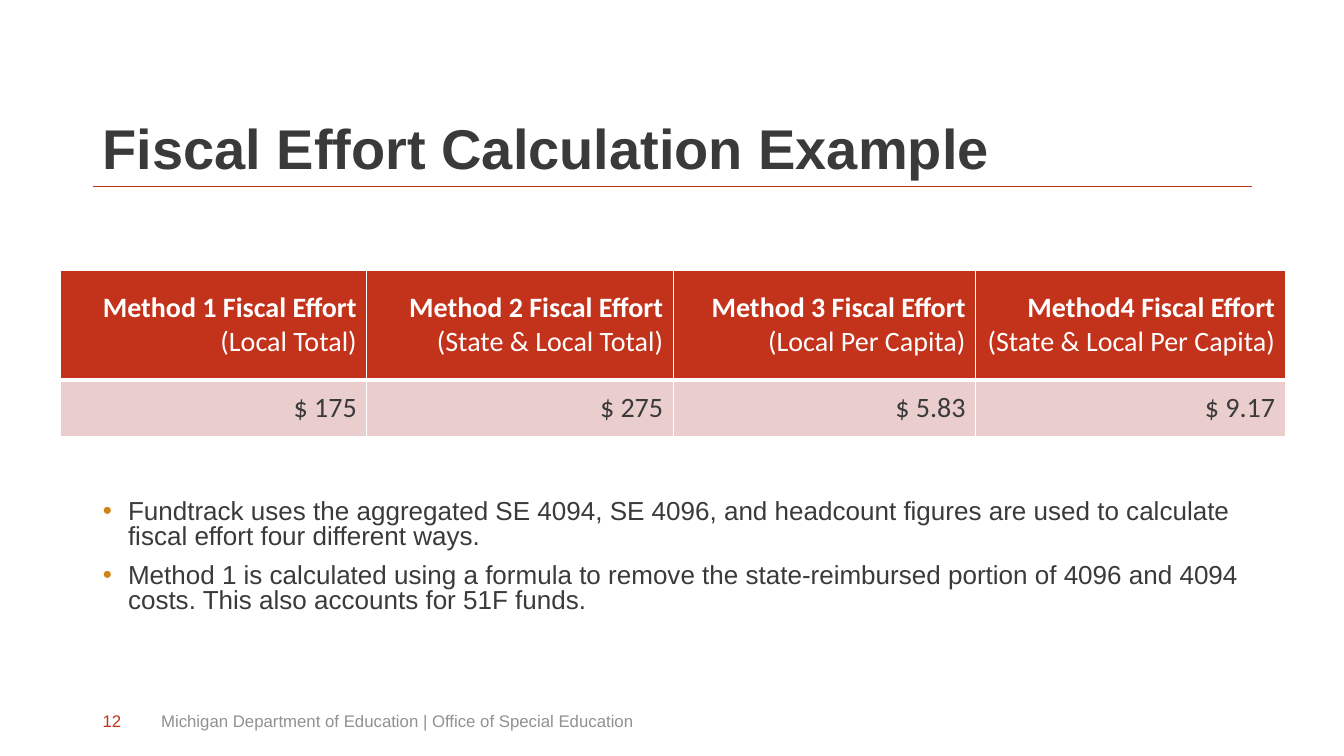
from dataclasses import dataclass

from lxml import etree
from pptx import Presentation
from pptx.dml.color import RGBColor
from pptx.enum.shapes import MSO_CONNECTOR
from pptx.enum.text import MSO_ANCHOR, MSO_AUTO_SIZE, PP_ALIGN
from pptx.oxml import parse_xml
from pptx.oxml.ns import nsdecls, qn
from pptx.slide import Slide
from pptx.table import _Cell as Cell
from pptx.text.text import Font, TextFrame
from pptx.util import Inches, Length, Pt


@dataclass(frozen=True)
class Theme:
    accent: str = "C3321B"
    text: str = "3A3A3A"
    muted: str = "919191"
    white: str = "FFFFFF"
    value_fill: str = "E9CECD"
    bullet: str = "D1831E"
    text_font: str = "Arial"
    table_font: str = "Calibri"
    title_size: float = 40
    table_size: float = 20
    body_size: float = 18.6
    footer_size: float = 12
    cell_border: float = 1
    header_border: float = 3


@dataclass(frozen=True)
class Method:
    name: str
    scope: str
    value: str
    width: float


@dataclass(frozen=True)
class FooterItem:
    text: str
    left: float
    width: float
    color: str


THEME = Theme()
WIDTH, HEIGHT = Inches(13.33), Inches(7.5)

# Positions and sizes are percentages of the slide's width or height.
MARGIN, CONTENT_WIDTH = 6.9, 86.27
TITLE_TOP, TITLE_HEIGHT = 5.33, 19.33
TABLE_LEFT, TABLE_TOP = 4.5, 35.73
HEADER_HEIGHT, VALUE_HEIGHT = 14.53, 7.47
BODY_TOP, BODY_HEIGHT = 65.6, 17.2
FOOTER_TOP, FOOTER_HEIGHT = 92.67, 5.33

METHODS = (
    Method("Method 1 Fiscal Effort", "(Local Total)", "$ 175", 22.8),
    Method("Method 2 Fiscal Effort", "(State & Local Total)", "$ 275", 22.8),
    Method("Method 3 Fiscal Effort", "(Local Per Capita)", "$ 5.83", 22.5),
    Method("Method4 Fiscal Effort", "(State & Local Per Capita)", "$ 9.17", 23.03),
)
POINTS = (
    "Fundtrack uses the aggregated SE 4094, SE 4096, and headcount figures are used "
    "to calculate fiscal effort four different ways.",
    "Method 1 is calculated using a formula to remove the state-reimbursed portion of "
    "4096 and 4094 costs. This also accounts for 51F funds.",
)
FOOTER = (
    FooterItem("12", MARGIN, 3.38, THEME.accent),
    FooterItem("Michigan Department of Education | Office of Special Education",
               11.25, 62.94, THEME.muted),
)


def across(share: float) -> Length:
    return Length(round(WIDTH * share / 100))


def down(share: float) -> Length:
    return Length(round(HEIGHT * share / 100))


def place(shape, left: float, top: float, width: float, height: float) -> None:
    shape.left, shape.top = across(left), down(top)
    shape.width, shape.height = across(width), down(height)


def style(font: Font, name: str, size: float, color: str, bold: bool = False) -> None:
    font.name, font.size, font.bold = name, Pt(size), bold
    font.color.rgb = RGBColor.from_string(color)


def prepare(frame: TextFrame, anchor: MSO_ANCHOR) -> None:
    frame.word_wrap = True
    frame.auto_size = MSO_AUTO_SIZE.NONE
    frame.vertical_anchor = anchor


def add_title(slide: Slide) -> None:
    title = slide.shapes.title
    place(title, MARGIN, TITLE_TOP, CONTENT_WIDTH, TITLE_HEIGHT)
    title.text_frame.text = "Fiscal Effort Calculation Example"
    prepare(title.text_frame, MSO_ANCHOR.BOTTOM)
    paragraph = title.text_frame.paragraphs[0]
    paragraph.alignment, paragraph.line_spacing = PP_ALIGN.LEFT, 0.9
    style(paragraph.runs[0].font, THEME.text_font, THEME.title_size, THEME.text, True)


def add_title_rule(slide: Slide) -> None:
    y = down(TITLE_TOP + TITLE_HEIGHT)
    rule = slide.shapes.add_connector(
        MSO_CONNECTOR.STRAIGHT, across(MARGIN), y, across(MARGIN + CONTENT_WIDTH), y)
    rule.line.color.rgb = RGBColor.from_string(THEME.accent)
    rule.line.width = Pt(0.5)
    etree.SubElement(rule._element.spPr, qn("a:effectLst"))


def set_borders(cell: Cell, top: float, bottom: float) -> None:
    side = THEME.cell_border
    properties = cell._tc.get_or_add_tcPr()
    borders = (("lnL", side), ("lnR", side), ("lnT", top), ("lnB", bottom))
    for index, (tag, width) in enumerate(borders):
        properties.insert(index, parse_xml(
            f'<a:{tag} {nsdecls("a")} w="{Pt(width)}"><a:solidFill>'
            f'<a:srgbClr val="{THEME.white}"/></a:solidFill></a:{tag}>'))


def fill_cell(cell: Cell, lines: tuple[str, ...], fill: str, color: str,
              bold_first: bool) -> None:
    cell.fill.solid()
    cell.fill.fore_color.rgb = RGBColor.from_string(fill)
    cell.vertical_anchor = MSO_ANCHOR.MIDDLE
    cell.text_frame.text = "\n".join(lines)
    for index, paragraph in enumerate(cell.text_frame.paragraphs):
        paragraph.alignment = PP_ALIGN.RIGHT
        style(paragraph.runs[0].font, THEME.table_font, THEME.table_size, color,
              bold_first and index == 0)


def add_methods_table(slide: Slide) -> None:
    table = slide.shapes.add_table(
        2, len(METHODS), across(TABLE_LEFT), down(TABLE_TOP),
        across(sum(method.width for method in METHODS)),
        down(HEADER_HEIGHT + VALUE_HEIGHT)).table
    table.rows[0].height, table.rows[1].height = down(HEADER_HEIGHT), down(VALUE_HEIGHT)
    for index, method in enumerate(METHODS):
        table.columns[index].width = across(method.width)
        header, value = table.cell(0, index), table.cell(1, index)
        fill_cell(header, (method.name, method.scope), THEME.accent, THEME.white, True)
        fill_cell(value, (method.value,), THEME.value_fill, THEME.text, False)
        set_borders(header, THEME.cell_border, THEME.header_border)
        set_borders(value, THEME.header_border, THEME.cell_border)


def add_points(slide: Slide) -> None:
    body = slide.placeholders[1]
    place(body, MARGIN, BODY_TOP, CONTENT_WIDTH, BODY_HEIGHT)
    body.text_frame.text = "\n".join(POINTS)
    prepare(body.text_frame, MSO_ANCHOR.TOP)
    for index, paragraph in enumerate(body.text_frame.paragraphs):
        properties = paragraph._p.get_or_add_pPr()
        properties.set("marL", str(Inches(0.25)))
        properties.set("indent", str(-Inches(0.25)))
        color = etree.SubElement(properties, qn("a:buClr"))
        etree.SubElement(color, qn("a:srgbClr"), val=THEME.bullet)
        etree.SubElement(properties, qn("a:buFont"), typeface=THEME.text_font)
        etree.SubElement(properties, qn("a:buChar"), char="•")
        paragraph.alignment, paragraph.line_spacing = PP_ALIGN.LEFT, 0.8
        paragraph.space_before = Pt(10 if index else 0)
        style(paragraph.runs[0].font, THEME.text_font, THEME.body_size, THEME.text)


def add_footer_item(slide: Slide, item: FooterItem) -> None:
    box = slide.shapes.add_textbox(across(item.left), down(FOOTER_TOP),
                                   across(item.width), down(FOOTER_HEIGHT))
    box.text_frame.text = item.text
    prepare(box.text_frame, MSO_ANCHOR.MIDDLE)
    style(box.text_frame.paragraphs[0].runs[0].font, THEME.text_font,
          THEME.footer_size, item.color)


def main() -> None:
    presentation = Presentation()
    presentation.slide_width, presentation.slide_height = WIDTH, HEIGHT
    slide = presentation.slides.add_slide(presentation.slide_layouts[1])
    add_title_rule(slide)
    add_title(slide)
    add_methods_table(slide)
    add_points(slide)
    for item in FOOTER:
        add_footer_item(slide, item)
    presentation.save("out.pptx")


if __name__ == "__main__":
    main()
